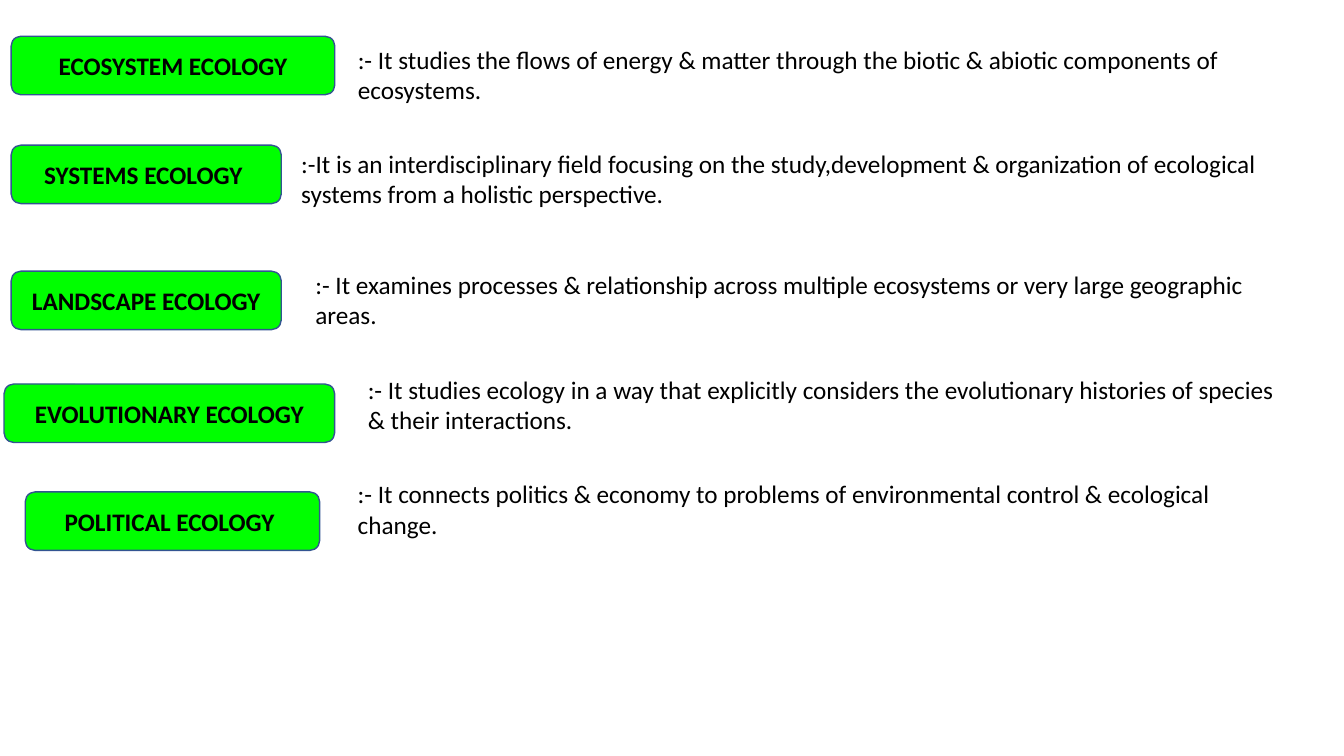
from dataclasses import dataclass

from pptx import Presentation
from pptx.dml.color import RGBColor
from pptx.enum.shapes import MSO_SHAPE
from pptx.enum.text import MSO_ANCHOR, MSO_AUTO_SIZE, PP_ALIGN
from pptx.util import Inches, Pt

# Each row: label, its (left, top, width), note, its (left, top, width),
# all in percent of the slide's width or height.
ROWS = [
    ("ECOSYSTEM ECOLOGY", (0.83, 4.8, 24.08),
     ":- It studies the flows of energy & matter through the biotic & abiotic "
     "components of ecosystems.", (25.88, 5.2, 71.4)),
    ("SYSTEMS ECOLOGY ", (0.83, 19.2, 20.1),
     ":-It is an interdisciplinary field focusing on the study,development & "
     "organization of ecological systems from a holistic perspective.",
     (21.68, 18.93, 75)),
    ("LANDSCAPE ECOLOGY", (0.83, 35.87, 20.1),
     ":- It examines processes & relationship across multiple ecosystems or "
     "very large geographic areas.", (22.73, 34.93, 73.95)),
    ("EVOLUTIONARY ECOLOGY", (0.3, 50.8, 24.6),
     ":- It studies ecology in a way that explicitly considers the evolutionary "
     "histories of species & their interactions.", (26.63, 48.8, 70.05)),
    ("POLITICAL ECOLOGY ", (1.88, 65.07, 21.9),
     ":- It connects politics & economy to problems of environmental control & "
     "ecological change.", (25.88, 62.67, 69)),
]
LABEL_HIGH, NOTE_HIGH = 7.73, 9.47


@dataclass(frozen=True)
class Theme:
    font: str = "Calibri"
    size: int = 18
    ink: str = "000000"
    fill: str = "00FF00"
    edge: str = "325491"


THEME = Theme()
WIDE, HIGH = Inches(13.33), Inches(7.5)


def place(spot, high):
    """Turn percentages into left, top, width and height."""
    left, top, wide = spot
    return [int(part * full / 100) for part, full in
            ((left, WIDE), (top, HIGH), (wide, WIDE), (high, HIGH))]


def write(frame, text, bold=False):
    frame.word_wrap = True
    run = frame.paragraphs[0].add_run()
    run.text = text
    run.font.name = THEME.font
    run.font.size = Pt(THEME.size)
    run.font.bold = bold
    run.font.color.rgb = RGBColor.from_string(THEME.ink)


def add_label(slide, text, spot):
    box = slide.shapes.add_shape(MSO_SHAPE.ROUNDED_RECTANGLE,
                                 *place(spot, LABEL_HIGH))
    box.shadow.inherit = False
    box.fill.solid()
    box.fill.fore_color.rgb = RGBColor.from_string(THEME.fill)
    box.line.color.rgb = RGBColor.from_string(THEME.edge)
    box.line.width = Pt(1)
    frame = box.text_frame
    frame.vertical_anchor = MSO_ANCHOR.MIDDLE
    frame.paragraphs[0].alignment = PP_ALIGN.CENTER
    write(frame, text, bold=True)


def add_note(slide, text, spot):
    frame = slide.shapes.add_textbox(*place(spot, NOTE_HIGH)).text_frame
    frame.auto_size = MSO_AUTO_SIZE.SHAPE_TO_FIT_TEXT
    write(frame, text)


def main():
    deck = Presentation()
    deck.slide_width, deck.slide_height = WIDE, HIGH
    slide = deck.slides.add_slide(deck.slide_layouts[6])
    for label, label_spot, note, note_spot in ROWS:
        add_label(slide, label, label_spot)
        add_note(slide, note, note_spot)
    deck.save("out.pptx")


if __name__ == "__main__":
    main()
